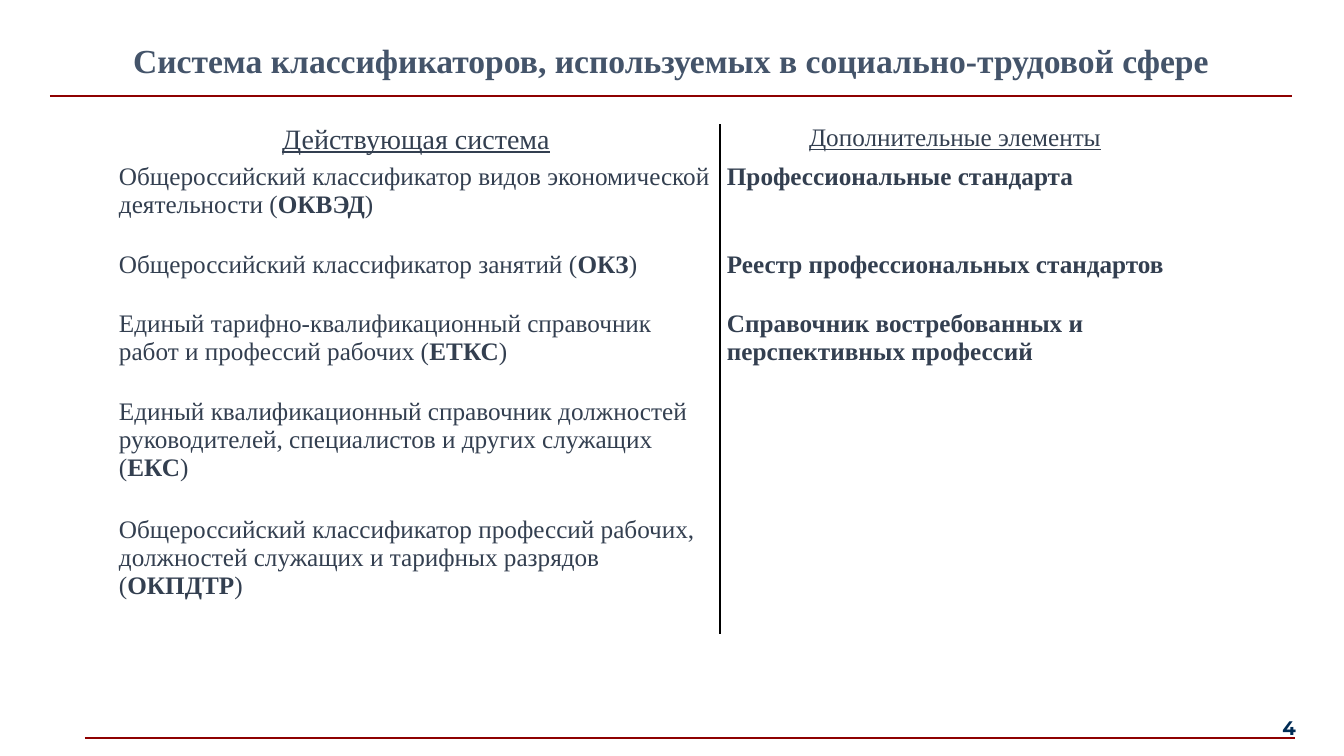
from lxml.etree import SubElement
from pptx import Presentation
from pptx.dml.color import RGBColor
from pptx.enum.shapes import MSO_CONNECTOR as Connector
from pptx.enum.text import MSO_ANCHOR as Anchor, PP_ALIGN as Align
from pptx.oxml import parse_xml
from pptx.oxml.ns import nsdecls, qn
from pptx.util import Pt

EMU_PER_PX = 914400 / 100.8
NO_STYLE = "{2D5ABB26-0587-4C30-8999-92F81FD0307C}"

CLASSIFIERS = [
    ("Общероссийский классификатор видов экономической деятельности (", "ОКВЭД"),
    ("Общероссийский классификатор занятий (", "ОКЗ"),
    ("Единый тарифно-квалификационный справочник работ и профессий рабочих (", "ЕТКС"),
    ("Единый квалификационный справочник должностей руководителей, "
     "специалистов и других служащих (", "ЕКС"),
    ("Общероссийский классификатор профессий рабочих, должностей служащих "
     "и тарифных разрядов (", "ОКПДТР"),
]
ADDITIONS = [
    "Профессиональные стандарта",
    "Реестр профессиональных стандартов",
    "Справочник востребованных и перспективных профессий",
]


def px(length):
    """Turn whole pixels into EMU."""
    return round(length * EMU_PER_PX)


def color(value):
    """Turn a hex string into a colour."""
    return RGBColor.from_string(value)


class SlideBuilder:
    """Hold the style and the current slide."""

    serif, sans = "Times New Roman", "Montserrat"
    ink, heading, rule, number = "333F50", "44546A", "8E0000", "002C55"
    divider = "000000"

    def __init__(self, deck):
        """Start a title-only slide."""
        self.slide = deck.slides.add_slide(deck.slide_layouts[5])

    def add_runs(self, frame, runs, size, hue, font, align=Align.LEFT, underline=False):
        """Fill the first paragraph with (text, bold) runs."""
        paragraph = frame.paragraphs[0]
        paragraph.alignment = align
        for text, bold in runs:
            run = paragraph.add_run()
            run.text = text
            run.font.name, run.font.size = font, Pt(size)
            run.font.bold, run.font.underline = bold, underline
            run.font.color.rgb = color(hue)

    def title(self, text, left, top, width, height):
        """Place and format the title placeholder."""
        title = self.slide.shapes.title
        title.left, title.top = px(left), px(top)
        title.width, title.height = px(width), px(height)
        title.text_frame.vertical_anchor = Anchor.MIDDLE
        self.add_runs(title.text_frame, [(text, True)], 24, self.heading, self.serif,
                      Align.CENTER)

    def horizontal_rule(self, left, right, y):
        """Draw a red rule."""
        line = self.slide.shapes.add_connector(
            Connector.STRAIGHT, px(left), px(y), px(right), px(y))
        line.line.color.rgb = color(self.rule)
        line.line.width = Pt(1.5)
        SubElement(line._element.spPr, qn("a:effectLst"))

    def page_number(self, text, left, top, width, height):
        """Add the page number."""
        box = self.slide.shapes.add_textbox(px(left), px(top), px(width), px(height))
        frame = box.text_frame
        frame.word_wrap = True
        frame.vertical_anchor = Anchor.MIDDLE
        frame.margin_left = frame.margin_right = 0
        frame.margin_top = frame.margin_bottom = 0
        self.add_runs(frame, [(text, True)], 14, self.number, self.sans, Align.RIGHT)

    def table(self, left, top, widths, heights):
        """Add a plain table with one line between its two columns."""
        frame = self.slide.shapes.add_table(
            len(heights), len(widths), px(left), px(top), px(sum(widths)), px(sum(heights)))
        table = frame.table
        table.first_row = table.horz_banding = False
        table._tbl.tblPr.find(qn("a:tableStyleId")).text = NO_STYLE
        for column, width in zip(table.columns, widths):
            column.width = px(width)
        for row, height in zip(table.rows, heights):
            row.height = px(height)
            for cell, edge in zip(row.cells, ("lnR", "lnL")):
                cell.margin_left = cell.margin_right = px(7)
                cell.margin_top = cell.margin_bottom = 0
                cell.fill.background()
                cell._tc.get_or_add_tcPr().insert(0, parse_xml(
                    f'<a:{edge} {nsdecls("a")} w="{Pt(1)}"><a:solidFill>'
                    f'<a:srgbClr val="{self.divider}"/></a:solidFill></a:{edge}>'))
        return table

    def cell(self, cell, runs, size=18, **style):
        """Put the runs into a table cell."""
        self.add_runs(cell.text_frame, runs, size, self.ink, self.serif, **style)


def main():
    """Build the slide and save it."""
    deck = Presentation()
    deck.slide_width, deck.slide_height = px(1344), px(756)
    page = SlideBuilder(deck)
    page.horizontal_rule(85, 1295, 738)
    page.horizontal_rule(50, 1292, 96)
    page.title("Система классификаторов, используемых в социально-трудовой сфере",
               47, 28, 1248, 65)

    systems = page.table(112, 124, [608, 470], [39, 88, 59, 88, 118, 118])
    systems.cell(3, 1).merge(systems.cell(5, 1))
    headers = [("Действующая система", 20), ("Дополнительные элементы", 18)]
    for column, (header, size) in enumerate(headers):
        page.cell(systems.cell(0, column), [(header, False)], size,
                  align=Align.CENTER, underline=True)
    for row, (description, code) in enumerate(CLASSIFIERS, 1):
        page.cell(systems.cell(row, 0), [(description, False), (code, True), (")", False)])
    for row, addition in enumerate(ADDITIONS, 1):
        page.cell(systems.cell(row, 1), [(addition, True)])

    page.page_number("4", 1237, 708, 59, 40)
    deck.save("out.pptx")


if __name__ == "__main__":
    main()
